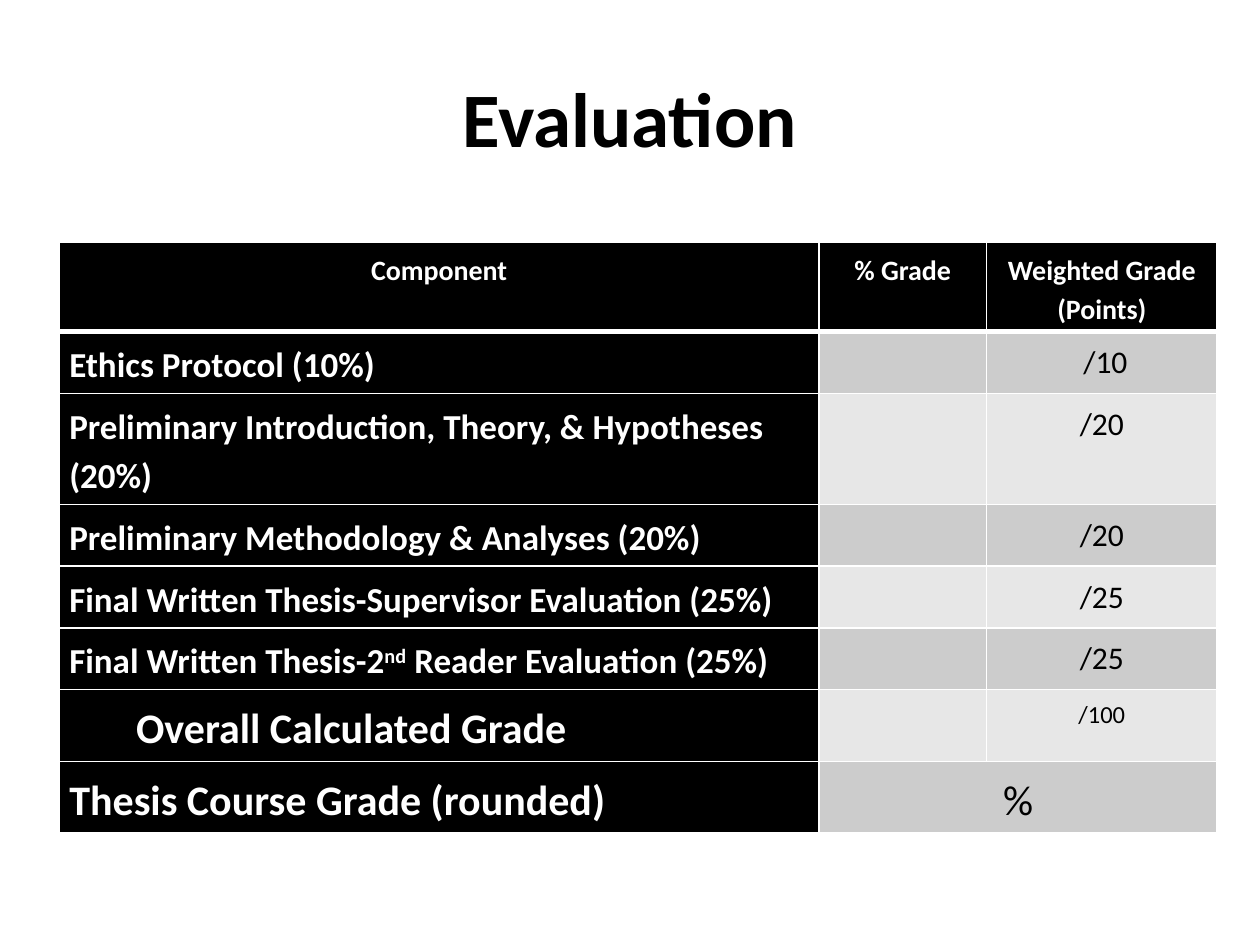
from lxml import etree
from pptx import Presentation
from pptx.dml.color import RGBColor
from pptx.enum.text import MSO_ANCHOR, PP_ALIGN
from pptx.oxml.ns import qn
from pptx.util import Inches, Pt

CENTER, LEFT = PP_ALIGN.CENTER, PP_ALIGN.LEFT
MIDDLE = MSO_ANCHOR.MIDDLE
FONT, BLACK, WHITE = "Calibri", "000000", "FFFFFF"
BANDS = ("CCCCCC", "E7E7E7")
SIDE_MARGIN, END_MARGIN, INDENT = 0.08, 0.05, 0.53

TITLE = "Evaluation"
HEADINGS = ("Component", "% Grade", "Weighted Grade (Points)")
# Component as text pieces (every second one superscript), its size, points, their size
COMPONENTS = [
    (["Ethics Protocol (10%)"], 20, " /10", 18),
    (["Preliminary Introduction, Theory, & Hypotheses (20%)"], 20, "/20", 18),
    (["Preliminary Methodology & Analyses (20%)"], 20, "/20", 18),
    (["Final Written Thesis-Supervisor Evaluation (25%)"], 20, "/25", 18),
    (["Final Written Thesis-2", "nd", " Reader Evaluation (25%)"], 20, "/25", 18),
    (["Overall Calculated Grade"], 24, "/100", 14),
]
FINAL_GRADE = ("Thesis Course Grade (rounded)", "%", 24)
COLUMN_WIDTHS = (6.03, 1.33, 1.83)
ROW_HEIGHTS = (0.71, 0.49, 0.88, 0.49, 0.49, 0.49, 0.57, 0.57)


def color(value):
    return RGBColor.from_string(value)


def write(frame, pieces, size, text_color, bold, align):
    """Fill a frame with one paragraph; every second piece is superscript."""
    para = frame.paragraphs[0]
    para.alignment = align
    font = para.font
    font.name, font.size, font.bold = FONT, Pt(size), bold
    font.color.rgb = color(text_color)
    for index, piece in enumerate(pieces):
        span = para.add_run()
        span.text = piece
        if index % 2:
            span.font._element.set("baseline", "30000")
    return para


def style_cell(cell, fill, bottom=1):
    cell.margin_left = cell.margin_right = Inches(SIDE_MARGIN)
    cell.margin_top = cell.margin_bottom = Inches(END_MARGIN)
    cell.fill.solid()
    cell.fill.fore_color.rgb = color(fill)
    properties = cell._tc.get_or_add_tcPr()
    widths = {"L": 1, "R": 1, "T": 1, "B": bottom}
    for position, (side, width) in enumerate(widths.items()):
        line = etree.Element(qn(f"a:ln{side}"), w=str(Pt(width)))
        paint = etree.SubElement(line, qn("a:solidFill"))
        etree.SubElement(paint, qn("a:srgbClr"), val=WHITE)
        properties.insert(position, line)


def write_cell(cell, pieces, size, text_color=WHITE, bold=True, align=CENTER):
    para = write(cell.text_frame, pieces, size, text_color, bold, align)
    para.line_spacing = 1.15


def add_title(slide):
    box = slide.shapes.add_textbox(Inches(0.5), Inches(0.3), Inches(9), Inches(1.25))
    box.text_frame.word_wrap = True
    box.text_frame.vertical_anchor = MIDDLE
    write(box.text_frame, [TITLE], 44, BLACK, True, CENTER)


def add_grades(slide):
    table = slide.shapes.add_table(
        len(ROW_HEIGHTS), len(COLUMN_WIDTHS), Inches(0.47), Inches(1.92),
        Inches(sum(COLUMN_WIDTHS)), Inches(sum(ROW_HEIGHTS))).table
    for column, width in zip(table.columns, COLUMN_WIDTHS):
        column.width = Inches(width)
    for number, (row, height) in enumerate(zip(table.rows, ROW_HEIGHTS)):
        row.height = Inches(height)
        for position, cell in enumerate(row.cells):
            dark = number == 0 or position == 0
            style_cell(cell, BLACK if dark else BANDS[(number - 1) % 2],
                       bottom=3 if number == 0 else 1)

    for position, heading in enumerate(HEADINGS):
        write_cell(table.cell(0, position), [heading], 16)
    for number, (pieces, size, points, points_size) in enumerate(COMPONENTS, 1):
        write_cell(table.cell(number, 0), pieces, size, align=LEFT)
        write_cell(table.cell(number, 2), [points], points_size, BLACK, False)
    table.cell(len(COMPONENTS), 0).margin_left = Inches(SIDE_MARGIN + INDENT)

    last = len(ROW_HEIGHTS) - 1
    label, grade, size = FINAL_GRADE
    table.cell(last, 1).merge(table.cell(last, 2))
    write_cell(table.cell(last, 0), [label], size, align=LEFT)
    write_cell(table.cell(last, 1), [grade], size, BLACK, False)


def main():
    deck = Presentation()
    deck.slide_width, deck.slide_height = Inches(10), Inches(7.5)
    slide = deck.slides.add_slide(deck.slide_layouts[6])
    add_title(slide)
    add_grades(slide)
    deck.save("out.pptx")


if __name__ == "__main__":
    main()
